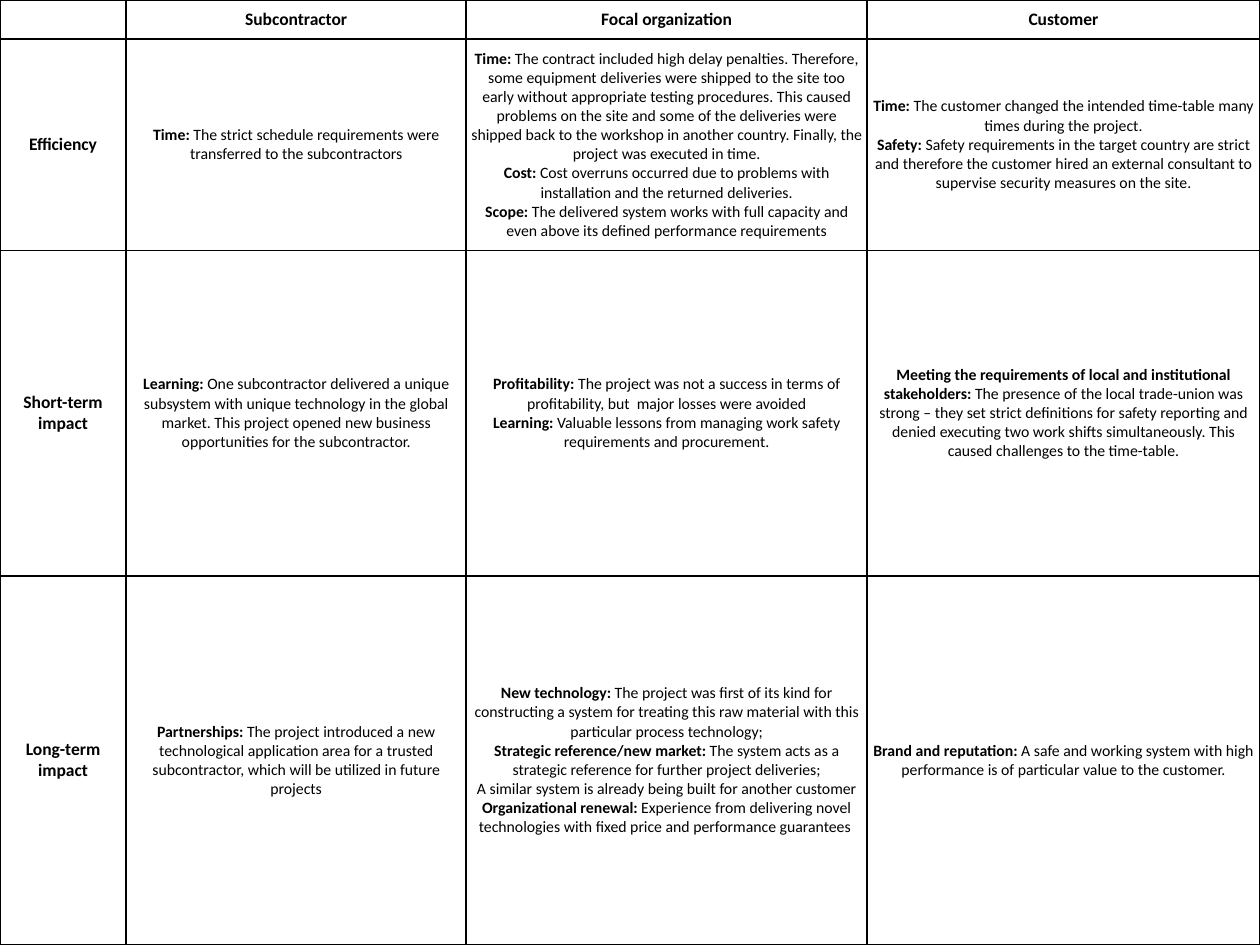
import pptx
import pptx.dml.color
import pptx.enum.text
import pptx.oxml
import pptx.oxml.ns
import pptx.util
from pptx.util import Inches

BLACK = pptx.dml.color.RGBColor(0x00, 0x00, 0x00)
FONT = "Calibri"
HEADING_SIZE, BODY_SIZE = 10, 9
BORDER_POINTS = 1

COLUMN_WIDTHS = [1, 2.7, 3.18, 3.12]
ROW_HEIGHTS = [0.31, 1.68, 2.58, 2.93]

HEADINGS = ["", "Subcontractor", "Focal organization", "Customer"]

# Each row: its heading, then cells made of (bold lead, plain text) paragraphs
ROWS = [
    ("Efficiency", [
        [("Time:", " The strict schedule requirements were transferred to the subcontractors")],
        [("Time:", " The contract included high delay penalties. Therefore, some equipment "
          "deliveries were shipped to the site too early without appropriate testing procedures. "
          "This caused problems on the site and some of the deliveries were shipped back to the "
          "workshop in another country. Finally, the project was executed in time."),
         ("Cost: ", "Cost overruns occurred due to problems with installation and the returned "
          "deliveries."),
         ("Scope: ", "The delivered system works with full capacity and even above its defined "
          "performance requirements")],
        [("Time:", " The customer changed the intended time-table many times during the project."),
         ("Safety:", " Safety requirements in the target country are strict and therefore the "
          "customer hired an external consultant to supervise security measures on the site.")],
    ]),
    ("Short-term impact", [
        [("Learning:", " One subcontractor delivered a unique subsystem with unique technology in "
          "the global market. This project opened new business opportunities for the "
          "subcontractor.")],
        [("Profitability:", " The project was not a success in terms of profitability, but  major "
          "losses were avoided"),
         ("Learning: ", "Valuable lessons from managing work safety requirements and "
          "procurement.")],
        [("Meeting the requirements of local and institutional stakeholders: ",
          "The presence of the local trade-union was strong – they set strict definitions for "
          "safety reporting and denied executing two work shifts simultaneously. This caused "
          "challenges to the time-table.")],
    ]),
    ("Long-term impact", [
        [("Partnerships:", " The project introduced a new technological application area for a "
          "trusted subcontractor, which will be utilized in future projects")],
        [("New technology:", " The project was first of its kind for constructing a system for "
          "treating this raw material with this particular process technology;"),
         ("Strategic reference/new market:", " The system acts as a strategic reference for "
          "further project deliveries;"),
         ("", "A similar system is already being built for another customer"),
         ("Organizational renewal: ", "Experience from delivering novel technologies with fixed "
          "price and performance guarantees ")],
        [("Brand and reputation:", " A safe and working system with high performance is of "
          "particular value to the customer.")],
    ]),
]


def add_borders(cell):
    properties = cell._tc.get_or_add_tcPr()
    width = pptx.util.Pt(BORDER_POINTS)
    for position, side in enumerate(("lnL", "lnR", "lnT", "lnB")):
        properties.insert(position, pptx.oxml.parse_xml(
            f'<a:{side} {pptx.oxml.ns.nsdecls("a")} w="{width}"><a:solidFill>'
            f'<a:srgbClr val="{BLACK}"/></a:solidFill></a:{side}>'))


def style_cell(cell):
    cell.fill.background()
    cell.vertical_anchor = pptx.enum.text.MSO_ANCHOR.MIDDLE
    cell.margin_left = cell.margin_right = Inches(0.04)
    cell.margin_top = cell.margin_bottom = 0
    add_borders(cell)


def write_cell(cell, paragraphs, size):
    style_cell(cell)
    frame = cell.text_frame
    for index, (lead, body) in enumerate(paragraphs):
        para = frame.add_paragraph() if index else frame.paragraphs[0]
        para.alignment = pptx.enum.text.PP_ALIGN.CENTER
        para.font.name = FONT
        para.font.size = pptx.util.Pt(size)
        para.font.color.rgb = BLACK
        for text, bold in ((lead, True), (body, False)):
            if text:
                span = para.add_run()
                span.text = text
                span.font.bold = bold


def write_heading(cell, text):
    write_cell(cell, [(text, "")], HEADING_SIZE)


def add_impact_table(page):
    frame = page.shapes.add_table(len(ROW_HEIGHTS), len(COLUMN_WIDTHS),
                                  0, 0, Inches(10), Inches(7.5))
    table = frame.table
    table.first_row = table.horz_banding = False
    for column, width in zip(table.columns, COLUMN_WIDTHS):
        column.width = Inches(width)
    for row, height in zip(table.rows, ROW_HEIGHTS):
        row.height = Inches(height)

    # Column headings
    for column, heading in enumerate(HEADINGS):
        write_heading(table.cell(0, column), heading)

    # Row headings and their findings
    for row, (heading, findings) in enumerate(ROWS, start=1):
        write_heading(table.cell(row, 0), heading)
        for column, paragraphs in enumerate(findings, start=1):
            write_cell(table.cell(row, column), paragraphs, BODY_SIZE)


def main():
    deck = pptx.Presentation()
    deck.slide_width, deck.slide_height = Inches(10), Inches(7.5)
    page = deck.slides.add_slide(deck.slide_layouts[6])
    add_impact_table(page)
    deck.save("out.pptx")


if __name__ == "__main__":
    main()
